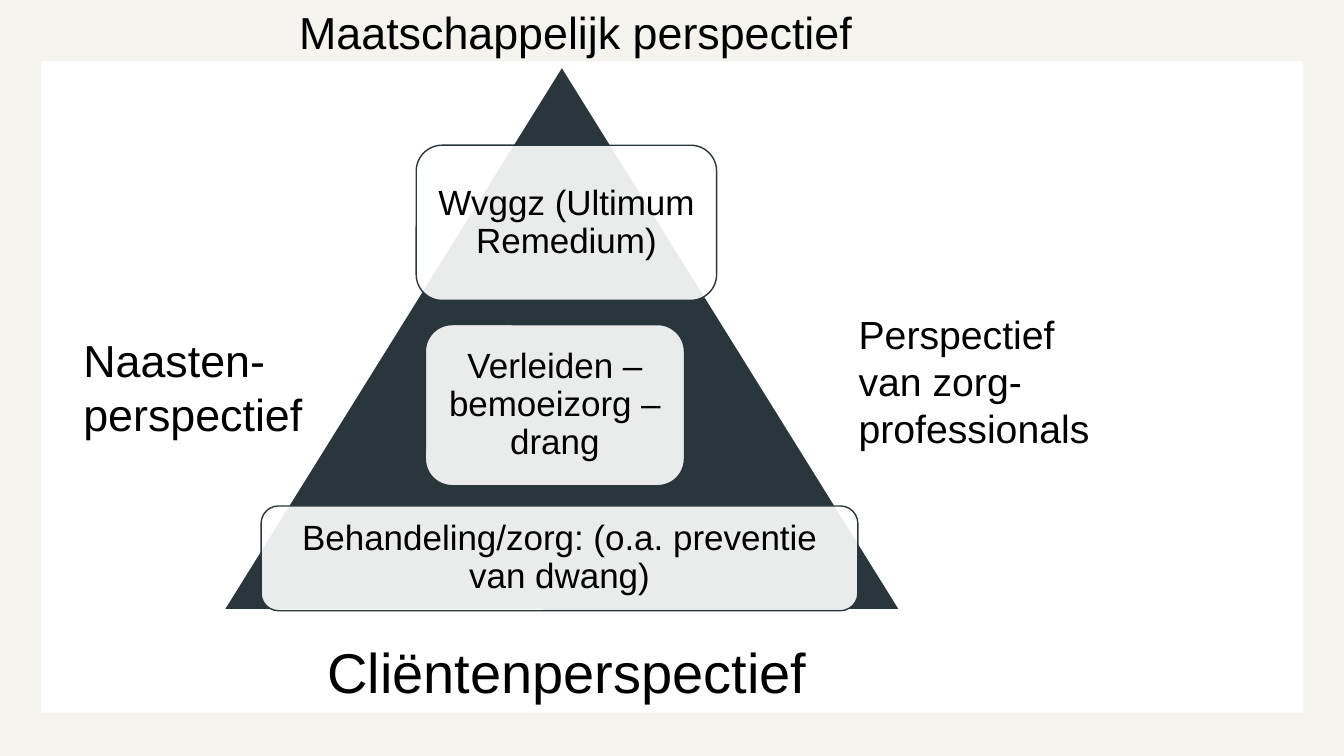
from pptx import Presentation
from pptx.dml.color import RGBColor
from pptx.enum.shapes import MSO_SHAPE
from pptx.enum.text import MSO_ANCHOR, MSO_AUTO_SIZE, PP_ALIGN
from pptx.oxml.ns import qn
from pptx.util import Cm, Pt
from lxml.etree import SubElement

COLORS = {"back": "F5F3EE", "white": "FFFFFF", "dark": "29363B", "text": "000000"}
LAYERS = [
    ("Wvggz (Ultimum Remedium)", 4.85, 1.98, 7.57, 3.91),
    ("Verleiden – bemoeizorg – drang", 5.08, 6.5, 6.53, 4.06),
    ("Behandeling/zorg: (o.a. preventie van dwang)", 0.94, 11.07, 15.04, 2.64),
]
VIEWS = [
    (["Naasten-", "perspectief"], 32, False, (1.85, 8.26, 6.07, 3)),
    (["Cliëntenperspectief"], 40, False, (8, 15.93, 13.11, 1.96)),
    (["Perspectief", "van zorg-", "professionals"], 28, False, (21.39, 7.7, 6.68, 3.84)),
    (["Maatschappelijk perspectief"], 32, True, (7.29, 0, 15.39, 1.63)),
]


def color(name):
    return RGBColor.from_string(COLORS[name])


def add_run(para, text, size):
    run = para.add_run()
    run.text = text
    run.font.name = "Arial"
    run.font.size = Pt(size)
    run.font.color.rgb = color("text")


def add_form(slide, kind, box, fill, line=None):
    form = slide.shapes.add_shape(kind, *map(Cm, box))
    form.shadow.inherit = False
    form.fill.solid()
    form.fill.fore_color.rgb = color(fill)
    if line:
        form.line.color.rgb = color(line)
        form.line.width = Pt(1)
    else:
        form.line.fill.background()
    return form


def add_layer(slide, text, box):
    form = add_form(slide, MSO_SHAPE.ROUNDED_RECTANGLE, box, "white", "dark")
    tint = form.fill._xPr.find(qn("a:solidFill"))[0]
    SubElement(tint, qn("a:alpha")).set("val", "90000")
    frame = form.text_frame
    frame.word_wrap = True
    frame.vertical_anchor = MSO_ANCHOR.MIDDLE
    frame.margin_left = frame.margin_right = Cm(0.25)
    frame.margin_top = frame.margin_bottom = Cm(0.25)
    para = frame.paragraphs[0]
    para.alignment = PP_ALIGN.CENTER
    para.line_spacing = 0.9
    add_run(para, text, 25)


def add_pyramid(slide, box):
    left, top = box[:2]
    add_form(slide, MSO_SHAPE.ISOSCELES_TRIANGLE, box, "dark", "white")
    for text, x, y, width, height in LAYERS:
        add_layer(slide, text, (left + x, top + y, width, height))


def add_view(slide, lines, size, wrap, box):
    frame = slide.shapes.add_textbox(*map(Cm, box)).text_frame
    frame.word_wrap = wrap
    frame.auto_size = MSO_AUTO_SIZE.SHAPE_TO_FIT_TEXT
    for i, line in enumerate(lines):
        para = frame.add_paragraph() if i else frame.paragraphs[0]
        add_run(para, line, size)


def main():
    deck = Presentation()
    deck.slide_width, deck.slide_height = Cm(33.87), Cm(19.05)
    slide = deck.slides.add_slide(deck.slide_layouts[6])
    slide.background.fill.solid()
    slide.background.fill.fore_color.rgb = color("back")
    add_form(slide, MSO_SHAPE.RECTANGLE, (1.04, 1.55, 31.8, 16.41), "white")
    add_pyramid(slide, (5.64, 1.68, 17.04, 13.69))
    for view in VIEWS:
        add_view(slide, *view)
    deck.save("out.pptx")


if __name__ == "__main__":
    main()
